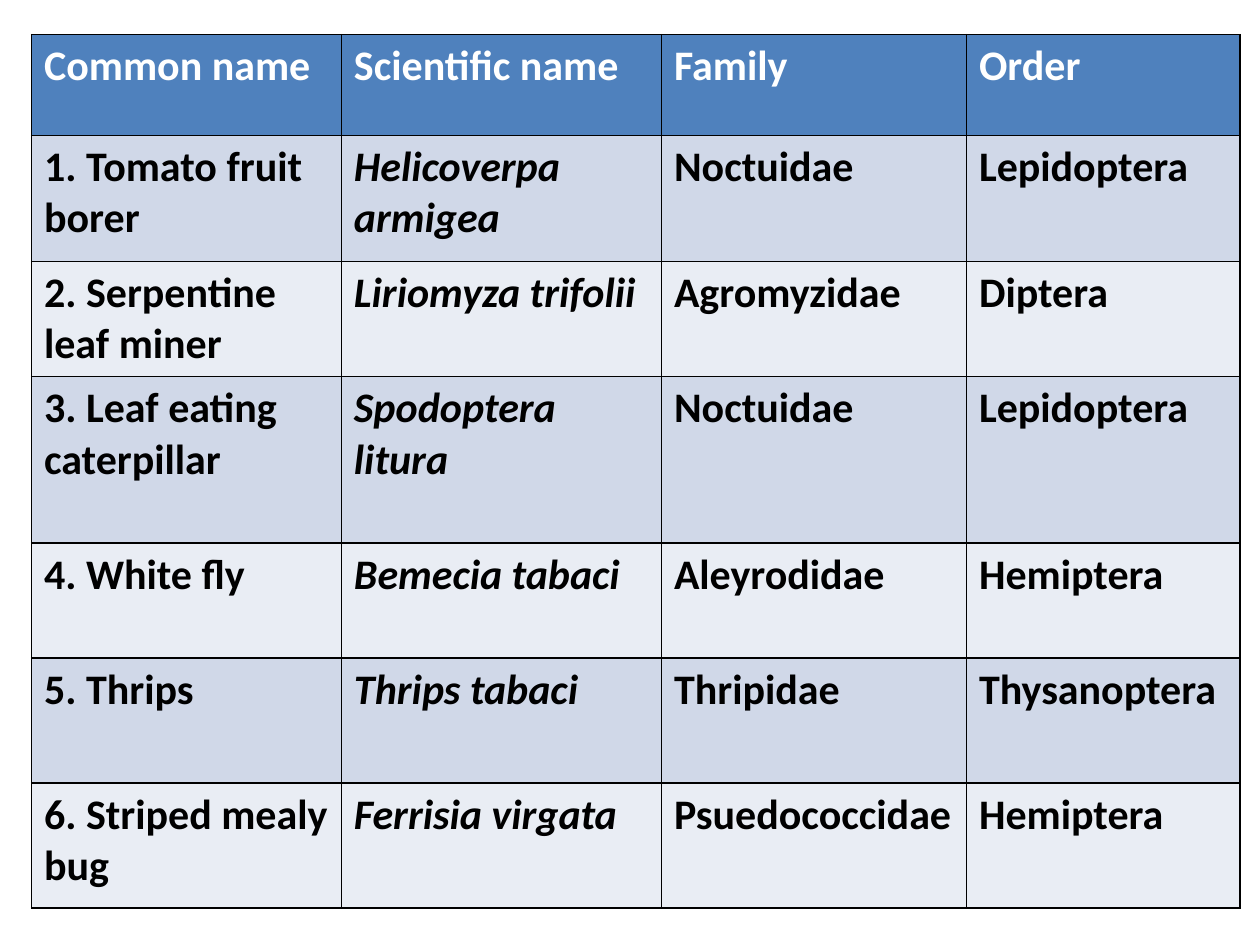
from lxml.etree import SubElement
from pptx import Presentation
from pptx.dml.color import RGBColor
from pptx.oxml.ns import qn
from pptx.util import Pt

HEADINGS = ("Common name", "Scientific name", "Family", "Order")
PESTS = [
    ("1. Tomato fruit borer", "Helicoverpa armigea", "Noctuidae", "Lepidoptera"),
    ("2. Serpentine leaf miner", "Liriomyza trifolii", "Agromyzidae", "Diptera"),
    ("3. Leaf eating caterpillar", "Spodoptera litura", "Noctuidae", "Lepidoptera"),
    ("4. White fly", "Bemecia tabaci", "Aleyrodidae", "Hemiptera"),
    ("5. Thrips", "Thrips tabaci", "Thripidae", "Thysanoptera"),
    ("6. Striped mealy bug", "Ferrisia virgata", "Psuedococcidae", "Hemiptera"),
]
SCIENTIFIC_COLUMN = HEADINGS.index("Scientific name")

SLIDE_SIZE = (720, 540)
TABLE_LEFT, TABLE_TOP = 18, 19.8
COLUMN_WIDTHS = (177.1, 182.9, 174.3, 156.2)
ROW_HEIGHTS = (57.6, 72, 65.8, 95, 65.8, 71.5, 71.5)

THEME = {
    "font": "Calibri",
    "size": 24,
    "header_fill": "4F81BD",
    "header_text": "FFFFFF",
    "body_fills": ("D0D8E8", "E9EDF4"),
    "body_text": "000000",
    "border": "000000",
    "border_width": 1,
}


def write_text(cell, text, color, italic=False):
    run = cell.text_frame.paragraphs[0].add_run()
    run.text = text
    run.font.name = THEME["font"]
    run.font.size = Pt(THEME["size"])
    run.font.bold = True
    run.font.italic = italic
    run.font.color.rgb = RGBColor.from_string(color)


def fill_and_border(cell, fill):
    properties = cell._tc.get_or_add_tcPr()
    for side in ("a:lnL", "a:lnR", "a:lnT", "a:lnB"):
        line = SubElement(properties, qn(side), w=str(Pt(THEME["border_width"])))
        solid = SubElement(line, qn("a:solidFill"))
        SubElement(solid, qn("a:srgbClr"), val=THEME["border"])
    cell.fill.solid()
    cell.fill.fore_color.rgb = RGBColor.from_string(fill)


def add_pest_table(slide):
    rows = [HEADINGS, *PESTS]
    table = slide.shapes.add_table(
        len(rows), len(HEADINGS), Pt(TABLE_LEFT), Pt(TABLE_TOP),
        Pt(sum(COLUMN_WIDTHS)), Pt(sum(ROW_HEIGHTS)),
    ).table
    for column, width in zip(table.columns, COLUMN_WIDTHS):
        column.width = Pt(width)
    for row, height in zip(table.rows, ROW_HEIGHTS):
        row.height = Pt(height)

    for row_index, entries in enumerate(rows):
        is_header = row_index == 0
        fill = THEME["header_fill"] if is_header else THEME["body_fills"][(row_index - 1) % 2]
        color = THEME["header_text" if is_header else "body_text"]
        for column_index, entry in enumerate(entries):
            cell = table.cell(row_index, column_index)
            fill_and_border(cell, fill)
            write_text(cell, entry, color,
                       italic=not is_header and column_index == SCIENTIFIC_COLUMN)


def main():
    presentation = Presentation()
    presentation.slide_width, presentation.slide_height = map(Pt, SLIDE_SIZE)
    blank_layout = presentation.slide_layouts[6]
    add_pest_table(presentation.slides.add_slide(blank_layout))
    presentation.save("out.pptx")


if __name__ == "__main__":
    main()
